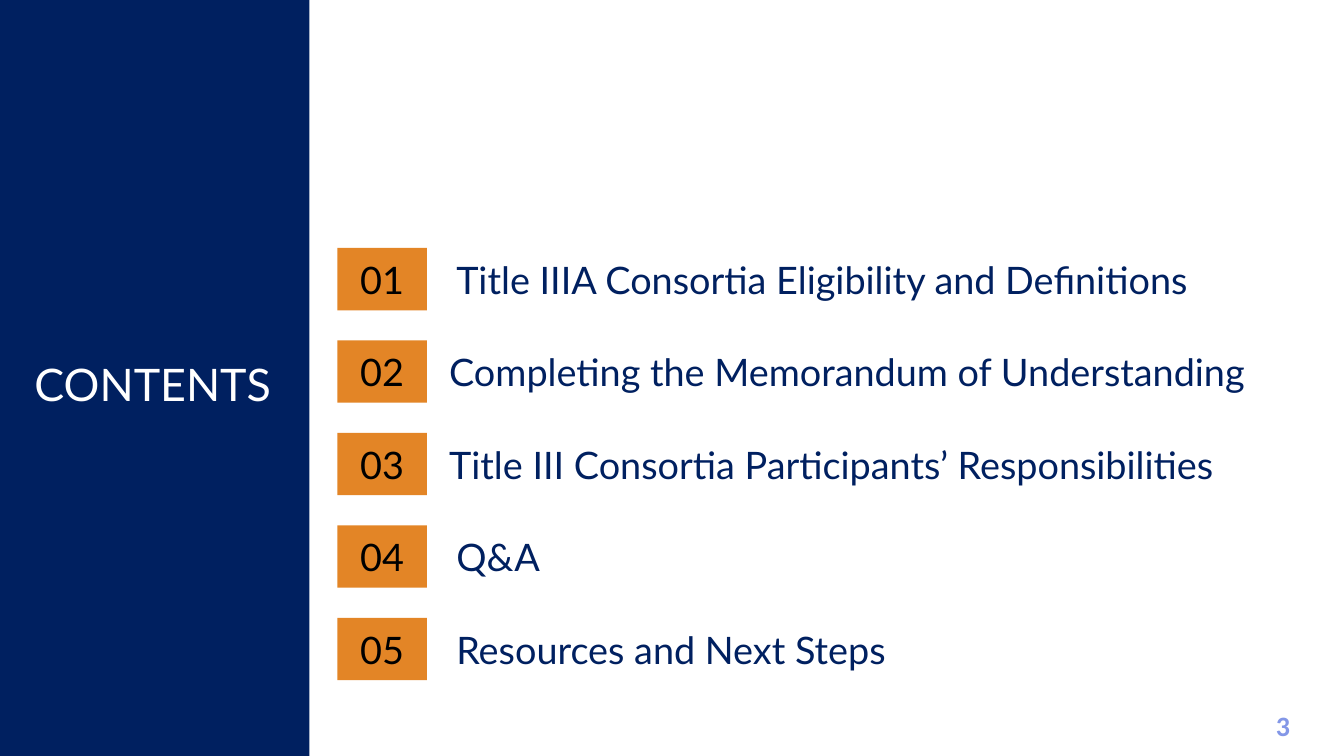
import pptx
import pptx.dml.color
import pptx.enum.shapes
import pptx.enum.text
import pptx.util

Cm = pptx.util.Cm
RGBColor = pptx.dml.color.RGBColor
ALIGN = pptx.enum.text.PP_ALIGN
ANCHOR = pptx.enum.text.MSO_ANCHOR

NAVY = RGBColor(0x00, 0x20, 0x60)
ORANGE = RGBColor(0xE3, 0x85, 0x26)
PERIWINKLE = RGBColor(0x83, 0x97, 0xE7)
WHITE = RGBColor(0xFF, 0xFF, 0xFF)
BLACK = RGBColor(0x00, 0x00, 0x00)

FIRST_ROW_TOP = 6.25
ROW_PITCH = 2.33
ROW_HEIGHT = 1.57
TOPICS = [
    # text left edge in cm, topic
    (11.25, "Title IIIA Consortia Eligibility and Definitions"),
    (11.07, "Completing the Memorandum of Understanding"),
    (11.07, "Title III Consortia Participants’ Responsibilities"),
    (11.25, "Q&A"),
    (11.25, "Resources and Next Steps"),
]


def add_rectangle(shapes, left, top, width, height, color):
    rectangle = shapes.add_shape(
        pptx.enum.shapes.MSO_SHAPE.RECTANGLE, Cm(left), Cm(top), Cm(width), Cm(height))
    rectangle.shadow.inherit = False
    rectangle.fill.solid()
    rectangle.fill.fore_color.rgb = color
    rectangle.line.fill.background()
    return rectangle


def write_text(box, text, size, color, align=ALIGN.CENTER, anchor=ANCHOR.MIDDLE,
               font="Lato", bold=False):
    frame = box.text_frame
    frame.word_wrap = True
    frame.vertical_anchor = anchor
    frame.text = text
    para = frame.paragraphs[0]
    para.alignment = align
    span = para.runs[0]
    span.font.name = font
    span.font.size = pptx.util.Pt(size)
    span.font.bold = bold
    span.font.color.rgb = color


deck = pptx.Presentation()
deck.slide_width = Cm(33.87)
deck.slide_height = Cm(19.05)
page = deck.slides.add_slide(deck.slide_layouts[6])

page_number = page.shapes.add_textbox(Cm(31.55), Cm(17.73), Cm(1.57), Cm(1.12))
write_text(page_number, "3", 20, PERIWINKLE, anchor=ANCHOR.TOP, font="Calibri", bold=True)

add_rectangle(page.shapes, 0, 0, 7.8, 19.05, NAVY)
heading = page.shapes.add_textbox(Cm(0), Cm(8.86), Cm(7.7), Cm(1.63))
write_text(heading, "CONTENTS", 32, WHITE, anchor=ANCHOR.TOP)

for index, (text_left, topic) in enumerate(TOPICS):
    top = FIRST_ROW_TOP + index * ROW_PITCH
    row = page.shapes.add_group_shape()
    number = add_rectangle(row.shapes, 8.5, top, 2.26, ROW_HEIGHT, ORANGE)
    write_text(number, f"{index + 1:02}", 27, BLACK)
    label = row.shapes.add_textbox(Cm(text_left), Cm(top), Cm(22), Cm(ROW_HEIGHT))
    write_text(label, topic, 27, NAVY, align=ALIGN.LEFT)

deck.save("out.pptx")
